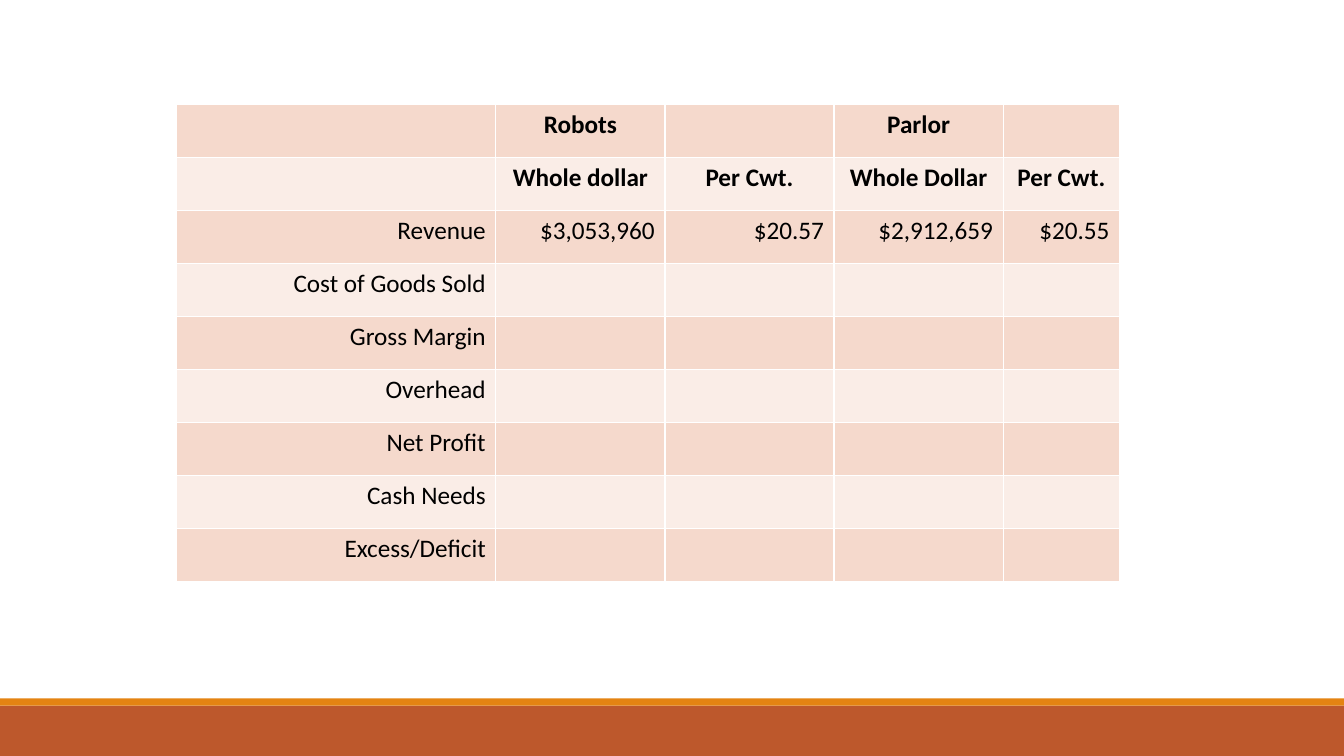
from typing import NamedTuple

from lxml import etree
from pptx import Presentation
from pptx import util as u
from pptx.dml import color
from pptx.enum import shapes, text
from pptx.oxml import ns

COLORS = {
    "rust": "BD582C",
    "orange": "E48312",
    "band_dark": "F5D9CC",
    "band_light": "FAEDE7",
    "border": "FFFFFF",
    "text": "000000",
}
FONT = "Calibri"
SLIDE_W, SLIDE_H = 960, 540
TABLE_LEFT, TABLE_TOP = 126.2, 74.9
COL_WIDTHS = [228, 120.8, 120.8, 120.8, 83.2]
ROW_H = 37.85
HEADER_ROWS = 2


class Bar(NamedTuple):
    top: float
    height: float
    fill: str


class Row(NamedTuple):
    label: str
    values: tuple[str, ...] = ()


BARS = [Bar(504, 36, "rust"), Bar(498.8, 5.2, "orange")]

ROWS = [
    Row("", ("Robots", "", "Parlor")),
    Row("", ("Whole dollar", "Per Cwt.", "Whole Dollar", "Per Cwt.")),
    Row("Revenue", ("$3,053,960", "$20.57", "$2,912,659", "$20.55")),
    Row("Cost of Goods Sold"),
    Row("Gross Margin"),
    Row("Overhead"),
    Row("Net Profit"),
    Row("Cash Needs"),
    Row("Excess/Deficit"),
]


def rgb(name: str) -> color.RGBColor:
    return color.RGBColor.from_string(COLORS[name])


def draw_bar(s, bar: Bar) -> None:
    sp = s.shapes.add_shape(
        shapes.MSO_SHAPE.RECTANGLE, u.Pt(0), u.Pt(bar.top), u.Pt(SLIDE_W), u.Pt(bar.height)
    )
    sp.shadow.inherit = False
    sp.fill.solid()
    sp.fill.fore_color.rgb = rgb(bar.fill)
    sp.line.fill.background()


def add_borders(cell) -> None:
    tc_pr = cell._tc.get_or_add_tcPr()
    for side in ("lnL", "lnR", "lnT", "lnB"):
        ln = etree.SubElement(tc_pr, ns.qn(f"a:{side}"), w=str(u.Pt(1)))
        fill = etree.SubElement(ln, ns.qn("a:solidFill"))
        etree.SubElement(fill, ns.qn("a:srgbClr"), val=COLORS["border"])


def write_cell(cell, words: str, header: bool) -> None:
    p = cell.text_frame.paragraphs[0]
    p.alignment = text.PP_ALIGN.CENTER if header else text.PP_ALIGN.RIGHT
    r = p.add_run()
    r.text = words
    r.font.name = FONT
    r.font.size = u.Pt(18)
    r.font.bold = header
    r.font.color.rgb = rgb("text")


def draw_table(s, rows: list[Row]) -> None:
    tbl = s.shapes.add_table(
        len(rows), len(COL_WIDTHS), u.Pt(TABLE_LEFT), u.Pt(TABLE_TOP),
        u.Pt(sum(COL_WIDTHS)), u.Pt(ROW_H * len(rows)),
    ).table
    tbl.first_row = False
    for col, width in zip(tbl.columns, COL_WIDTHS):
        col.width = u.Pt(width)
    for i, row in enumerate(rows):
        tbl.rows[i].height = u.Pt(ROW_H)
        words = (row.label, *row.values)
        for j in range(len(COL_WIDTHS)):
            cell = tbl.cell(i, j)
            add_borders(cell)
            cell.fill.solid()
            cell.fill.fore_color.rgb = rgb("band_light" if i % 2 else "band_dark")
            if j < len(words) and words[j]:
                write_cell(cell, words[j], i < HEADER_ROWS)


def main() -> None:
    prs = Presentation()
    prs.slide_width, prs.slide_height = u.Pt(SLIDE_W), u.Pt(SLIDE_H)
    s = prs.slides.add_slide(prs.slide_layouts[6])
    for bar in BARS:
        draw_bar(s, bar)
    draw_table(s, ROWS)
    prs.save("out.pptx")


if __name__ == "__main__":
    main()
